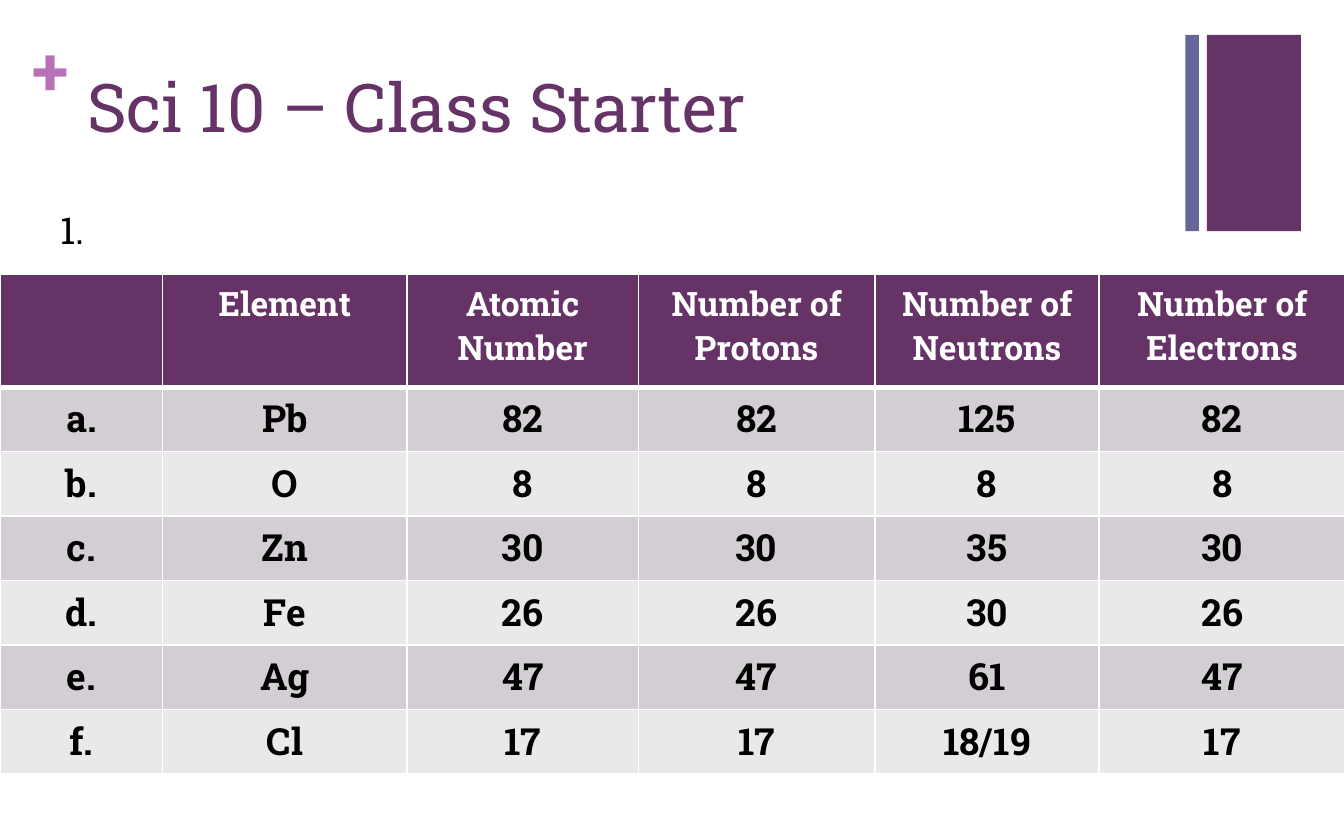
from lxml.etree import SubElement
from pptx import Presentation
from pptx.dml.color import RGBColor
from pptx.enum.shapes import MSO_SHAPE
from pptx.enum.text import MSO_ANCHOR, PP_ALIGN
from pptx.oxml.ns import qn
from pptx.util import Inches, Pt

FONT = "Roboto Slab"
COLORS = {
    "plum": "663366",
    "slate": "666699",
    "orchid": "B870B8",
    "band_dark": "D3CED3",
    "band_light": "EAE8EA",
    "white": "FFFFFF",
    "black": "000000",
}
COLUMN_WIDTHS = [1.21, 1.82, 1.72, 1.76, 1.67, 1.83]
HEADER_HEIGHT = 0.84
ROW_HEIGHT = 0.48
ELEMENT_ROWS = [
    ["", "Element", "Atomic Number", "Number of Protons",
     "Number of Neutrons", "Number of Electrons"],
    ["a.", "Pb", "82", "82", "125", "82"],
    ["b.", "O", "8", "8", "8", "8"],
    ["c.", "Zn", "30", "30", "35", "30"],
    ["d.", "Fe", "26", "26", "30", "26"],
    ["e.", "Ag", "47", "47", "61", "47"],
    ["f.", "Cl", "17", "17", "18/19", "17"],
]


def color(name):
    return RGBColor.from_string(COLORS[name])


def style_paragraph(paragraph, size, color_name, bold=False):
    font = paragraph.font
    font.name = FONT
    font.size = Pt(size)
    font.bold = bold
    font.color.rgb = color(color_name)


def add_bar(slide, left, top, width, height, color_name):
    bar = slide.shapes.add_shape(MSO_SHAPE.RECTANGLE, Inches(left), Inches(top),
                                 Inches(width), Inches(height))
    bar.shadow.inherit = False
    bar.fill.solid()
    bar.fill.fore_color.rgb = color(color_name)
    bar.line.fill.background()


def add_text(slide, left, top, width, height, text, size, color_name,
             bold=False, inset=None):
    box = slide.shapes.add_textbox(Inches(left), Inches(top), Inches(width), Inches(height))
    frame = box.text_frame
    frame.word_wrap = True
    frame.vertical_anchor = MSO_ANCHOR.TOP
    if inset is not None:
        frame.margin_left = frame.margin_right = Inches(inset)
        frame.margin_top = frame.margin_bottom = Inches(inset)
    frame.text = text
    style_paragraph(frame.paragraphs[0], size, color_name, bold)


def set_borders(cell, top=1, bottom=1):
    """Draw white borders; they must come before the fill in the cell XML."""
    properties = cell._tc.get_or_add_tcPr()
    for side, width in (("L", 1), ("R", 1), ("T", top), ("B", bottom)):
        line = SubElement(properties, qn(f"a:ln{side}"), w=str(Pt(width)))
        fill = SubElement(line, qn("a:solidFill"))
        SubElement(fill, qn("a:srgbClr"), val=COLORS["white"])


def fill_cell(cell, text, row_index):
    is_header = row_index == 0
    set_borders(cell, top=3 if row_index == 1 else 1, bottom=3 if is_header else 1)
    band = "band_dark" if row_index % 2 else "band_light"
    cell.fill.solid()
    cell.fill.fore_color.rgb = color("plum" if is_header else band)
    cell.text = text
    paragraph = cell.text_frame.paragraphs[0]
    paragraph.alignment = PP_ALIGN.CENTER
    style_paragraph(paragraph, 18 if is_header else 20,
                    "white" if is_header else "black", bold=True)


def add_element_table(slide, left, top):
    height = HEADER_HEIGHT + ROW_HEIGHT * (len(ELEMENT_ROWS) - 1)
    table = slide.shapes.add_table(
        len(ELEMENT_ROWS), len(COLUMN_WIDTHS), Inches(left), Inches(top),
        Inches(sum(COLUMN_WIDTHS)), Inches(height)).table
    for column, width in zip(table.columns, COLUMN_WIDTHS):
        column.width = Inches(width)
    for row_index, texts in enumerate(ELEMENT_ROWS):
        table.rows[row_index].height = Inches(ROW_HEIGHT if row_index else HEADER_HEIGHT)
        for column_index, text in enumerate(texts):
            fill_cell(table.cell(row_index, column_index), text, row_index)


def main():
    presentation = Presentation()
    presentation.slide_width = Inches(10)
    presentation.slide_height = Inches(6.25)
    slide = presentation.slides.add_slide(presentation.slide_layouts[6])

    # Corner decoration
    add_bar(slide, 8.98, 0.26, 0.7, 1.46, "plum")
    add_text(slide, 0.24, 0.21, 0.29, 0.61, "+", 36, "orchid", bold=True, inset=0)
    add_bar(slide, 8.82, 0.26, 0.1, 1.46, "slate")

    # Title
    add_text(slide, 0.55, 0.44, 8.26, 1.02, "Sci 10 – Class Starter", 36, "plum")

    # Question number and element table
    add_element_table(slide, 0, 2.04)
    add_text(slide, 0.35, 1.49, 0.55, 0.44, "1.", 20, "black")

    presentation.save("out.pptx")


if __name__ == "__main__":
    main()
